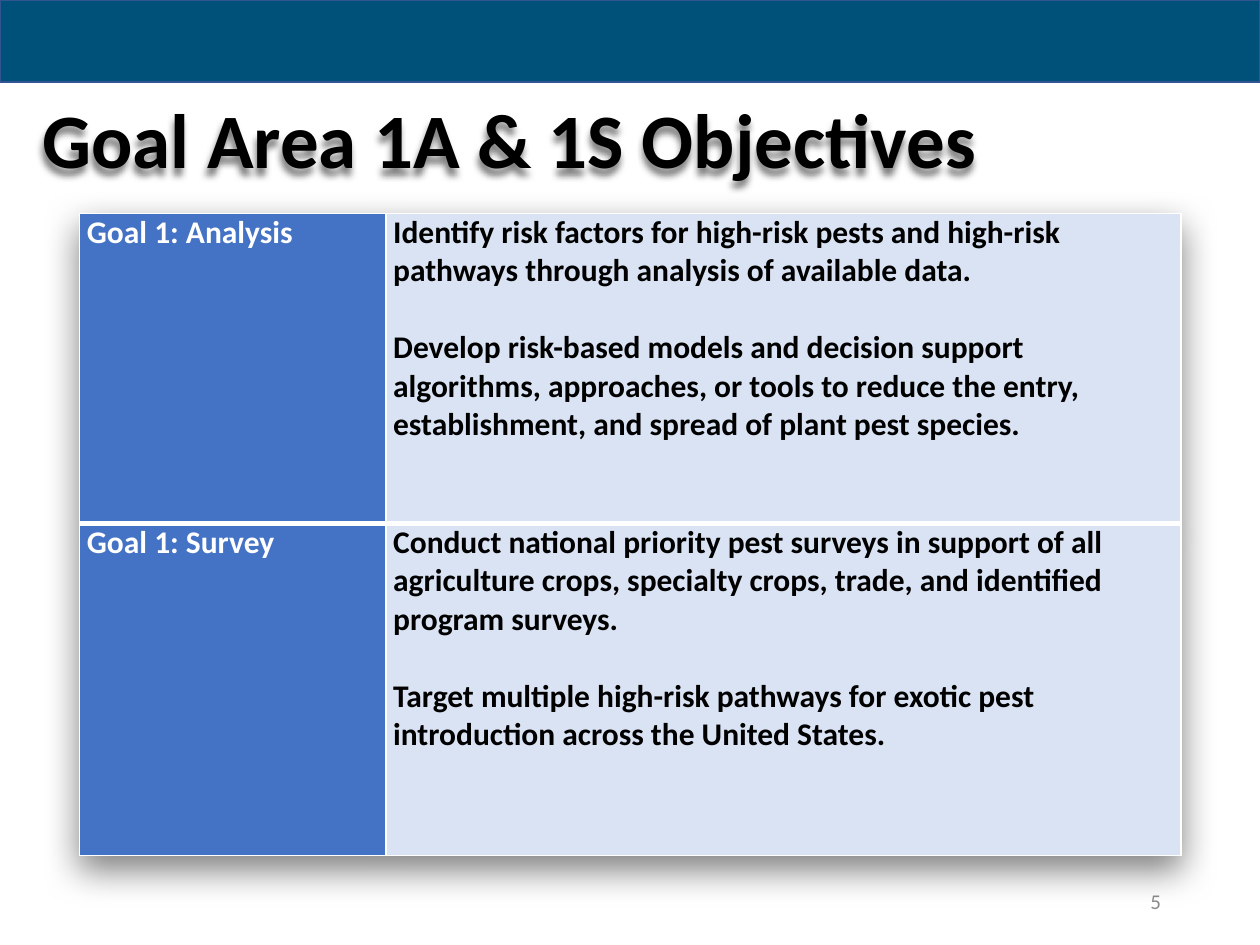
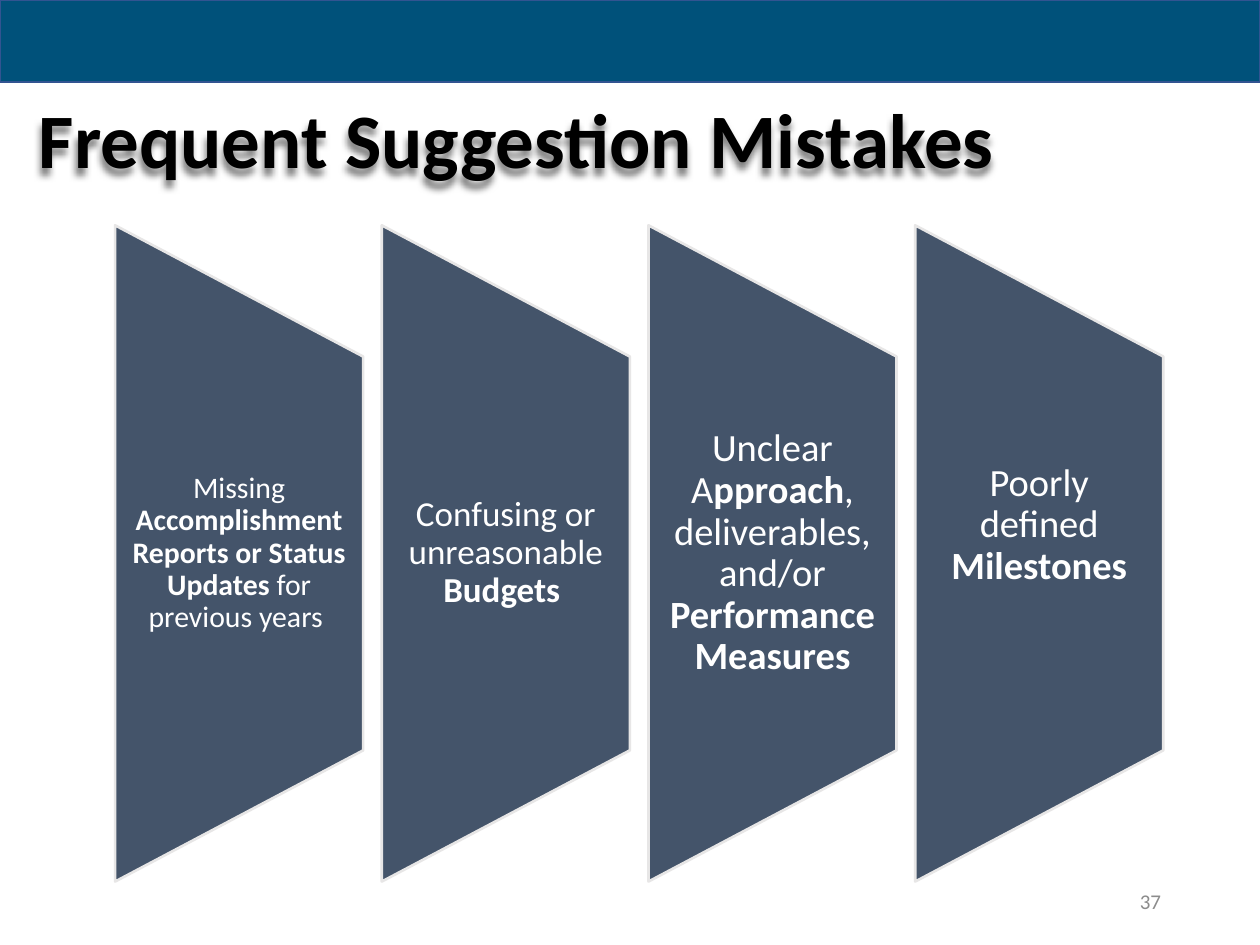
from dataclasses import dataclass

import pptx
import pptx.dml.color
import pptx.enum.shapes
import pptx.enum.text
import pptx.oxml
import pptx.oxml.ns
import pptx.util

Pt = pptx.util.Pt
Align = pptx.enum.text.PP_ALIGN
Anchor = pptx.enum.text.MSO_ANCHOR
Shape = pptx.enum.shapes.MSO_SHAPE

HEX = {
    "band": "00517A", "edge": "325491", "text": "000000", "white": "FFFFFF",
    "goal": "4472C4", "aim": "DAE3F3", "panel": "44546A", "rim": "E7E6E6",
    "page": "8C8C8C",
}
FONT = "Calibri"
WIDTH, HEIGHT = 720, 540


@dataclass
class Goal:
    name: str
    aims: list[str]
    height: float


@dataclass
class Panel:
    text: str
    size: float
    side: float
    foot: float = 0


GOALS = [
    Goal("Goal 1: Analysis", [
        "Identify risk factors for high-risk pests and high-risk pathways "
        "through analysis of available data.",
        "Develop risk-based models and decision support algorithms, approaches, "
        "or tools to reduce the entry, establishment, and spread of plant pest species.",
    ], 177),
    Goal("Goal 1: Survey", [
        "Conduct national priority pest surveys in support of all agriculture crops, "
        "specialty crops, trade, and identified program surveys.",
        "Target multiple high-risk pathways for exotic pest introduction "
        "across the United States.",
    ], 190),
]
COLS = (175, 454.5)

PANELS = [
    Panel("Missing *Accomplishment Reports or Status Updates *for previous years ", 17, 8.6),
    Panel("Confusing or unreasonable *Budgets ", 20, 10),
    Panel("Unclear A*pproach*, deliverables, and/or *Performance Measures", 22, 11),
    Panel("Poorly defined *Milestones", 22, 11, foot=32),
]


def tint(name: str):
    return pptx.dml.color.RGBColor.from_string(HEX[name])


def node(xml: str):
    return pptx.oxml.parse_xml(xml.replace(">", f" {pptx.oxml.ns.nsdecls('a')}>", 1))


def write(frame, *paras: str, size: float, color: str = "text", bold: bool = False,
          align=Align.LEFT, anchor=Anchor.MIDDLE, line: float = 1, gap: float = 0,
          inset: tuple = (7.2, 3.6, 7.2, 3.6)) -> None:
    """Fill a frame or cell; an asterisk switches bold, inset is left, top, right, bottom."""
    frame.margin_left, frame.margin_top, frame.margin_right, frame.margin_bottom = map(Pt, inset)
    frame.vertical_anchor = anchor
    body = getattr(frame, "text_frame", frame)
    body.word_wrap = True
    for i, text in enumerate(paras):
        para = body.add_paragraph() if i else body.paragraphs[0]
        para.alignment = align
        para.line_spacing = line
        if i:
            para.space_before = Pt(gap)
        for j, part in enumerate(text.split("*")):
            run = para.add_run()
            run.text = part
            run.font.name = FONT
            run.font.size = Pt(size)
            run.font.bold = bold or j % 2 == 1
            run.font.color.rgb = tint(color)


def shadow(blur: float, dist: float, angle: int, alpha: int):
    return node(
        f'<a:effectLst><a:outerShdw blurRad="{Pt(blur)}" dist="{Pt(dist)}" '
        f'dir="{angle * 60000}" algn="ctr" rotWithShape="0"><a:srgbClr val="000000">'
        f'<a:alpha val="{alpha * 1000}"/></a:srgbClr></a:outerShdw></a:effectLst>')


def draw(slide, kind, box: tuple, fill: str, edge: str, width: float):
    shape = slide.shapes.add_shape(kind, *map(Pt, box))
    shape.shadow.inherit = False
    shape.fill.solid()
    shape.fill.fore_color.rgb = tint(fill)
    shape.line.color.rgb = tint(edge)
    shape.line.width = Pt(width)
    return shape


def label(slide, text: str, box: tuple, **form) -> None:
    write(slide.shapes.add_textbox(*map(Pt, box)).text_frame, text, **form)


def start(deck, name: str, page: int, pad: float = 7.2):
    """Add a slide with its band, title and page number."""
    slide = deck.slides.add_slide(deck.slide_layouts[5])
    draw(slide, Shape.RECTANGLE, (0, 0, WIDTH, 47), "band", "edge", 1)
    title = slide.shapes.title
    title.left, title.top, title.width, title.height = map(Pt, (17, 53.5, 683.5, 57))
    title.text_frame.auto_size = pptx.enum.text.MSO_AUTO_SIZE.NONE
    write(title.text_frame, name, size=44, bold=True, line=0.9, inset=(pad, 3, pad, 3))
    title._element.spPr.append(shadow(4, 4, 120, 50))
    label(slide, str(page), (508.5, 500.5, 162, 28.75), size=12, color="page",
          align=Align.RIGHT)
    return slide


def paint(cell, fill: str, widths: dict[str, float]) -> None:
    """Set a cell's borders, by side, and its fill."""
    props = cell._tc.get_or_add_tcPr()
    for side, width in widths.items():
        props.append(node(
            f'<a:ln{side} w="{Pt(width)}"><a:solidFill><a:srgbClr val="{HEX["white"]}"/>'
            f'</a:solidFill></a:ln{side}>'))
    cell.fill.solid()
    cell.fill.fore_color.rgb = tint(fill)


def goals(deck) -> None:
    slide = start(deck, "Goal Area 1A & 1S Objectives", 5)
    high = sum(goal.height for goal in GOALS)
    frame = slide.shapes.add_table(len(GOALS), len(COLS),
                                   *map(Pt, (45.5, 122, sum(COLS), high)))
    table = frame.table
    table.first_row = table.horz_banding = False
    table._tbl.tblPr.insert(0, shadow(20, 8, 90, 50))
    for col, width in zip(table.columns, COLS):
        col.width = Pt(width)
    last = len(GOALS) - 1
    for i, goal in enumerate(GOALS):
        table.rows[i].height = Pt(goal.height)
        edges = {"L": 1, "R": 1, "T": 3 if i else 1, "B": 3 if i < last else 1}
        looks = (([goal.name], "white", "goal"), (goal.aims, "text", "aim"))
        for j, (paras, color, fill) in enumerate(looks):
            cell = table.cell(i, j)
            write(cell, *paras, size=18, color=color, bold=True, gap=22,
                  anchor=Anchor.TOP, inset=(4.2, 0, 4.2, 0))
            paint(cell, fill, edges)


def faults(deck) -> None:
    slide = start(deck, "Frequent Suggestion Mistakes", 37, pad=5.2)
    left, pitch, mid = 65.75, 152.4, 316.25
    wide, high, deep = 141.75, 375, 225
    for i, panel in enumerate(PANELS):
        x = left + i * pitch
        box = (x + (wide - high) / 2, mid - wide / 2, high, wide)
        shape = draw(slide, Shape.FLOWCHART_MANUAL_OPERATION, box, "panel", "rim", 1.5)
        shape.rotation = 270
        label(slide, panel.text, (x, mid - deep / 2, wide, deep), size=panel.size,
              color="white", align=Align.CENTER, line=0.9,
              inset=(panel.side, 0, panel.side, panel.foot))


def main() -> None:
    deck = pptx.Presentation()
    deck.slide_width, deck.slide_height = Pt(WIDTH), Pt(HEIGHT)
    goals(deck)
    faults(deck)
    deck.save("out.pptx")


if __name__ == "__main__":
    main()
